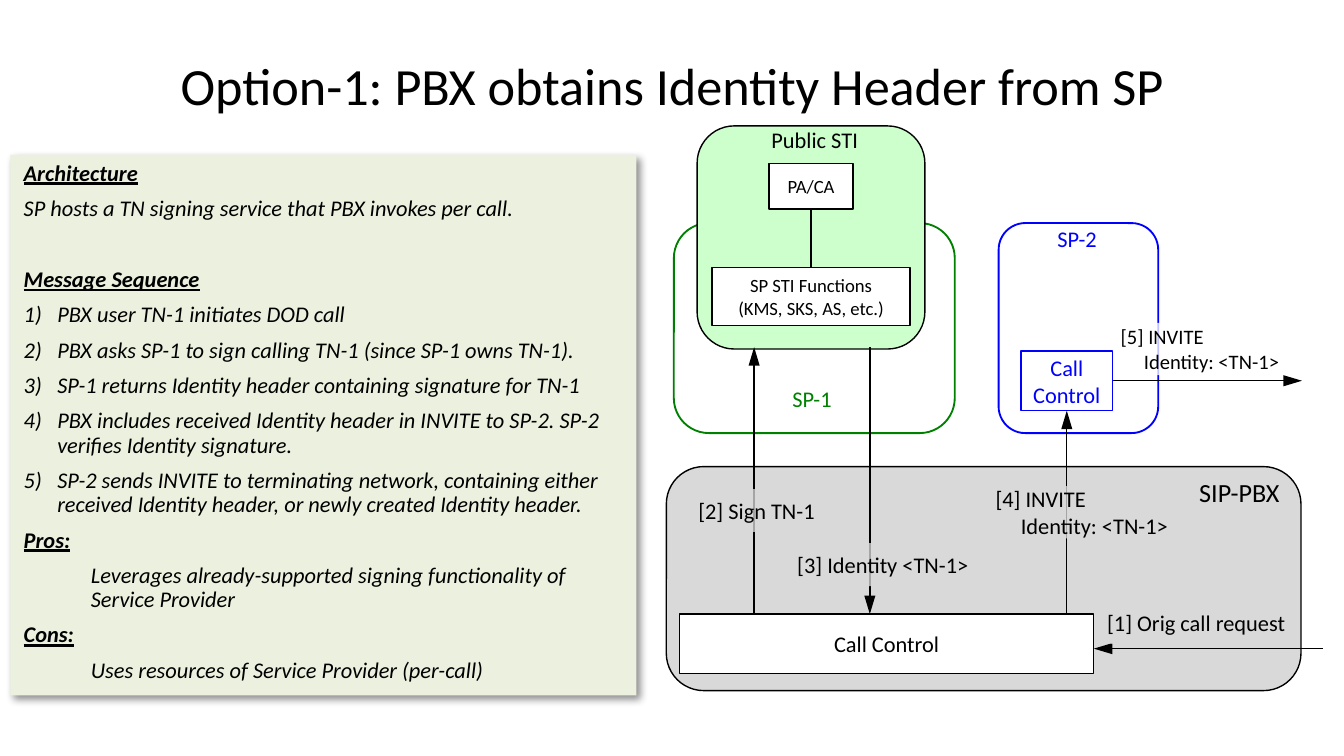
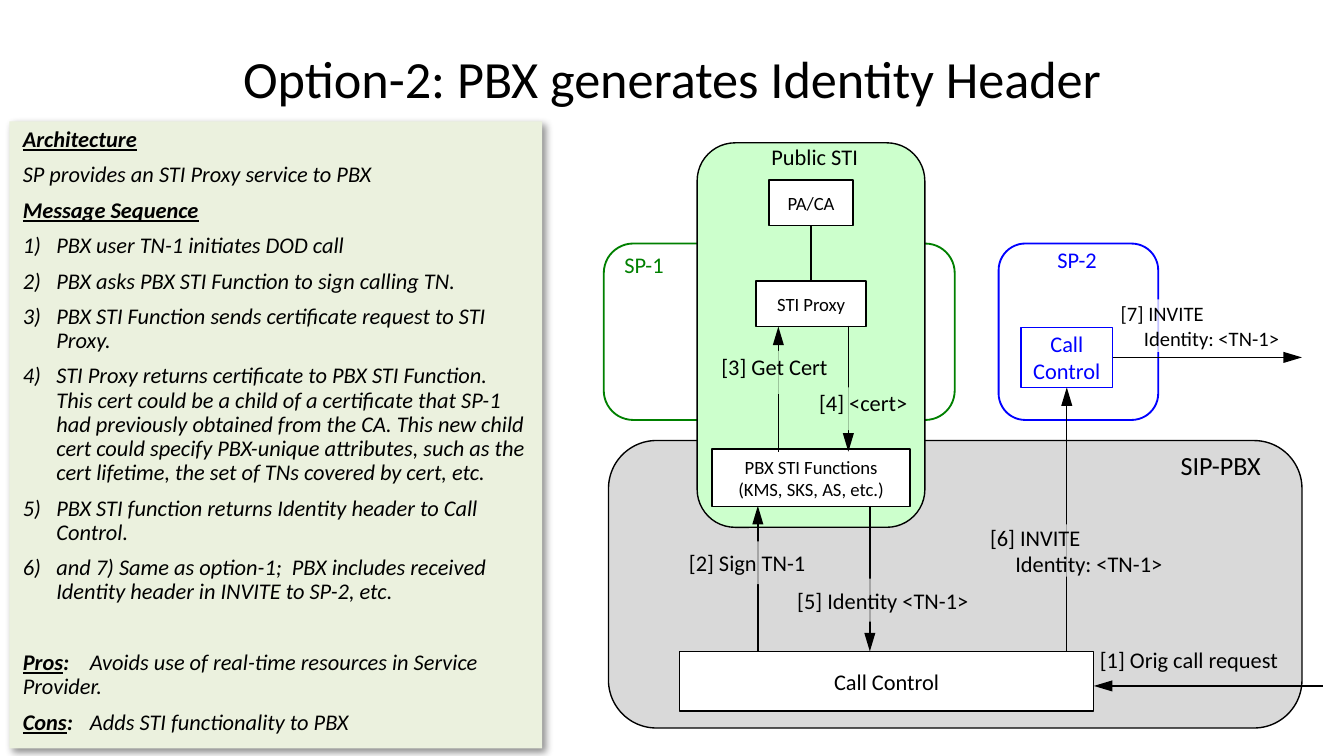
from lxml import etree
from pptx import Presentation
from pptx.dml.color import RGBColor
from pptx.enum import shapes, text
from pptx.oxml.ns import qn
from pptx.util import Pt

COLOURS = {
    "ink": "000000",
    "paper": "FFFFFF",
    "provider_one": "008000",
    "provider_two": "0000FF",
    "sti": "CCFFCC",
    "pbx": "D9D9D9",
    "panel": "EBF1DE",
}
FONT = "Calibri"
RECTANGLE = shapes.MSO_SHAPE.RECTANGLE
ROUNDED = shapes.MSO_SHAPE.ROUNDED_RECTANGLE
CENTER = text.PP_ALIGN.CENTER
LEFT = text.PP_ALIGN.LEFT
TOP, BOTTOM, RIGHT = 0, 2, 3
GAP = 25
INVITE = "Identity: <TN-1>"


def colour(name):
    return RGBColor.from_string(COLOURS[name])


def place(shape, left, top, width, height):
    shape.left, shape.top = Pt(left), Pt(top)
    shape.width, shape.height = Pt(width), Pt(height)


class Deck:
    def __init__(self):
        self.presentation = Presentation()
        self.presentation.slide_width = Pt(720)
        self.presentation.slide_height = Pt(405)
        self.slide = None

    def new_slide(self, title, title_top):
        self.slide = self.presentation.slides.add_slide(self.presentation.slide_layouts[1])
        shape = self.slide.shapes.title
        place(shape, 36, title_top, 648, 67.5)
        paragraph = shape.text_frame.paragraphs[0]
        paragraph.alignment = CENTER
        self.add_words(paragraph, title, 28)

    def add_words(self, paragraph, words, size, ink="ink", bold=None, italic=None,
                  underline=None):
        run = paragraph.add_run()
        run.text = words
        font = run.font
        font.name, font.size = FONT, Pt(size)
        font.color.rgb = colour(ink)
        font.bold, font.italic, font.underline = bold, italic, underline

    def panel(self, area, entries):
        shape = self.slide.placeholders[1]
        place(shape, *area)
        shape.fill.solid()
        shape.fill.fore_color.rgb = colour("panel")
        shape.shadow.inherit = False
        effects = shape._element.spPr.find(qn("a:effectLst"))
        shadow = etree.SubElement(effects, qn("a:outerShdw"), blurRad=str(Pt(4)),
                                  dist=str(Pt(3)), dir="2700000", algn="tl", rotWithShape="0")
        shade = etree.SubElement(shadow, qn("a:srgbClr"), val=COLOURS["ink"])
        etree.SubElement(shade, qn("a:alpha"), val="43000")
        frame = shape.text_frame
        frame.auto_size = text.MSO_AUTO_SIZE.NONE
        frame.vertical_anchor = text.MSO_ANCHOR.TOP
        for index, entry in enumerate(entries):
            paragraph = frame.add_paragraph() if index else frame.paragraphs[0]
            self.panel_entry(paragraph, *entry)

    def panel_entry(self, paragraph, kind, words, detail=None, before=6):
        paragraph.line_spacing = 0.9
        paragraph.space_before = Pt(before)
        paragraph.level = 1 if kind == "point" else 0
        left, indent = {"step": (18, -18), "point": (36, 0)}.get(kind, (0, 0))
        properties = paragraph._p.get_or_add_pPr()
        properties.set("marL", str(Pt(left)))
        properties.set("indent", str(Pt(indent)))
        if kind == "step":
            etree.SubElement(properties, qn("a:buAutoNum"), type="arabicParenR")
        else:
            etree.SubElement(properties, qn("a:buNone"))
        strong = kind in ("heading", "inline")
        self.add_words(paragraph, words, 12, bold=strong, italic=True, underline=strong)
        if kind == "inline":
            tabs = etree.SubElement(properties, qn("a:tabLst"))
            etree.SubElement(tabs, qn("a:tab"), pos=str(Pt(36)), algn="l")
            self.add_words(paragraph, ":", 12, bold=True, italic=True, underline=False)
            self.add_words(paragraph, "\t" + detail, 12, bold=False, italic=True,
                           underline=False)

    def shape(self, kind, area, fill=None, line=None, weight=0.75, opacity=None):
        shape = self.slide.shapes.add_shape(kind, *map(Pt, area))
        shape.shadow.inherit = False
        if fill:
            shape.fill.solid()
            shape.fill.fore_color.rgb = colour(fill)
        else:
            shape.fill.background()
        if opacity:
            fill_colour = next(shape._element.spPr.iter(qn("a:srgbClr")))
            etree.SubElement(fill_colour, qn("a:alpha"), val=str(opacity * 1000))
        if line:
            shape.line.color.rgb = colour(line)
            shape.line.width = Pt(weight)
        else:
            shape.line.fill.background()
        return shape

    def label(self, shape, lines, size, ink="ink", align=CENTER, wrap=True,
              anchor=text.MSO_ANCHOR.MIDDLE, indent=0):
        frame = shape.text_frame
        frame.margin_left = frame.margin_right = frame.margin_top = frame.margin_bottom = 0
        frame.word_wrap = wrap
        frame.vertical_anchor = anchor
        for index, words in enumerate(lines):
            paragraph = frame.add_paragraph() if index else frame.paragraphs[0]
            paragraph.alignment = align
            if index and indent:
                paragraph._p.get_or_add_pPr().set("marL", str(Pt(indent)))
            self.add_words(paragraph, words, size, ink)

    def zone(self, area, fill, line, weight=0.75):
        return self.shape(ROUNDED, area, fill, line, weight)

    def box(self, area, *lines, size=10, ink="ink", wrap=False):
        shape = self.shape(RECTANGLE, area, "paper", ink)
        self.label(shape, lines, size, ink, wrap=wrap)
        return shape

    def name(self, area, words, size=12, ink="ink"):
        self.label(self.shape(ROUNDED, area), [words], size, ink)

    def message(self, area, *lines, fill="pbx", size=12, align=LEFT,
                anchor=text.MSO_ANCHOR.MIDDLE, opacity=76):
        shape = self.shape(ROUNDED, area, fill, opacity=opacity)
        self.label(shape, lines, size, align=align, anchor=anchor, indent=size * 1.13)

    def line(self, start, end, arrow=True, begin_at=None, end_at=None):
        connector = self.slide.shapes.add_connector(
            shapes.MSO_CONNECTOR.STRAIGHT, *map(Pt, start + end))
        if begin_at:
            connector.begin_connect(*begin_at)
        if end_at:
            connector.end_connect(*end_at)
        connector.line.color.rgb = colour("ink")
        connector.line.width = Pt(0.75)
        if arrow:
            outline = connector._element.spPr.find(qn("a:ln"))
            etree.SubElement(outline, qn("a:tailEnd"), type="triangle", w="med", len="lg")
        etree.SubElement(connector._element.spPr, qn("a:effectLst"))


def draw_provider_one(deck, left, width, top, height, name_left, name_top):
    deck.zone((left, top, width, height), "paper", "provider_one", 1)
    deck.name((name_left, name_top, 38, 33), "SP-1", ink="provider_one")


def draw_pbx(deck, area, name_left, name_top, control_top):
    deck.zone(area, "pbx", "ink")
    deck.name((name_left, name_top, 80, 33), "SIP-PBX", 14)
    deck.box((364, control_top, 222, 32), "Call Control", size=12)
    request_y = control_top + 18.5
    deck.line((708.5, request_y), (586, request_y))


def draw_public_sti(deck, top, height, functions_top, functions_name):
    deck.zone((373.5, top, 122, height), "sti", "ink")
    deck.name((396.5, top - 9, 80, 33), "Public STI")
    authority = deck.box((412, top + 20, 45, 24.5), "PA/CA")
    functions = deck.box((381.5, functions_top, 106, 31), functions_name,
                         "(KMS, SKS, AS, etc.)")
    return authority, functions


def link(deck, lower, upper):
    deck.line((434.5, 150), (434.5, 112), False, (lower, TOP), (upper, BOTTOM))


def draw_signing(deck, sign_x, sti_y, control_top, sign_label, identity_top, identity):
    deck.line((466, sti_y), (466, control_top))
    deck.line((sign_x, control_top), (sign_x, sti_y))
    deck.message((*sign_label, 86, 23), "[2] Sign TN-1")
    deck.message((426, identity_top, 96, 23), identity)


def draw_provider_two(deck, top, height, control_top, pbx_control_top,
                      invite_area, invite, forwarded):
    deck.zone((535, top, 85.5, height), "paper", "provider_two", 1)
    deck.name((558, top - 8, 38, 33), "SP-2", ink="provider_two")
    control = deck.box((547, control_top, 49, 32), "Call Control",
                       size=12, ink="provider_two", wrap=True)
    deck.line((571.5, pbx_control_top), (571.5, control_top + 32), end_at=(control, BOTTOM))
    deck.message(invite_area, invite, INVITE)
    deck.message((599, control_top - 15, 109, 28), forwarded, INVITE, fill="paper", size=11)
    middle = control_top + 16
    deck.line((596, middle), (697.5, middle), begin_at=(control, RIGHT))


def build_option_one(deck):
    deck.new_slide("Option-1: PBX obtains Identity Header from SP", 11.5)
    deck.panel((5.5, 83, 335.5, 289.5), [
        ("heading", "Architecture"),
        ("text", "SP hosts a TN signing service that PBX invokes per call."),
        ("heading", "Message Sequence", None, GAP),
        ("step", "PBX user TN-1 initiates DOD call"),
        ("step", "PBX asks SP-1 to sign calling TN-1 (since SP-1 owns TN-1)."),
        ("step", "SP-1 returns Identity header containing signature for TN-1"),
        ("step", "PBX includes received Identity header in INVITE to SP-2. SP-2 "
                 "verifies Identity signature."),
        ("step", "SP-2 sends INVITE to terminating network, containing either "
                 "received Identity header, or newly created Identity header."),
        ("heading", "Pros:"),
        ("point", "Leverages already-supported signing functionality of Service Provider"),
        ("heading", "Cons:"),
        ("point", "Uses resources of Service Provider (per-call)"),
    ])
    control_top = 329
    draw_provider_one(deck, 361, 150.5, 119.5, 112.5, 416, 197)
    draw_pbx(deck, (357, 250, 340, 120), 624, 247, control_top)
    deck.message((592, 322, 98, 23), "[1] Orig call request")
    authority, functions = draw_public_sti(deck, 67.5, 119.5, 143.5, "SP STI Functions")
    link(deck, functions, authority)
    draw_signing(deck, 404, 186, control_top, (373, 262), 291, "[3] Identity <TN-1>")
    draw_provider_two(deck, 119.5, 112.5, 188, control_top, (532, 260.5, 103, 28),
                      "[4] INVITE", "[5] INVITE")


def build_option_two(deck):
    deck.new_slide("Option-2: PBX generates Identity Header", 8)
    deck.panel((5, 65, 285.5, 336), [
        ("heading", "Architecture"),
        ("text", "SP provides an STI Proxy service to PBX"),
        ("heading", "Message Sequence"),
        ("step", "PBX user TN-1 initiates DOD call"),
        ("step", "PBX asks PBX STI Function to sign calling TN."),
        ("step", "PBX STI Function sends certificate request to STI Proxy."),
        ("step", "STI Proxy returns certificate to PBX STI Function. This cert could be "
                 "a child of a certificate that SP-1 had previously obtained from the CA. "
                 "This new child cert could specify PBX-unique attributes, such as the "
                 "cert lifetime, the set of TNs covered by cert, etc."),
        ("step", "PBX STI function returns Identity header to Call Control."),
        ("step", "and 7) Same as option-1;  PBX includes received Identity header in "
                 "INVITE to SP-2, etc."),
        ("inline", "Pros", "Avoids use of real-time resources in Service Provider.", GAP),
        ("inline", "Cons", "Adds STI functionality to PBX"),
    ])
    control_top = 349
    draw_provider_one(deck, 323.5, 188, 130.5, 94.5, 326, 125)
    draw_pbx(deck, (326, 236, 371.5, 154), 614, 232.5, control_top)
    deck.name((588, 342, 98, 23), "[1] Orig call request")
    draw_provider_two(deck, 130.5, 94.5, 175.5, control_top, (529, 281, 109.5, 28),
                      "[6] INVITE", "[7] INVITE")
    authority, functions = draw_public_sti(deck, 76.5, 206, 240.5, "PBX STI Functions")
    proxy = deck.box((405, 150.5, 59, 24.5), "STI Proxy")
    link(deck, proxy, authority)
    deck.line((417, 242), (417, 175))
    deck.line((454.5, 174.5), (454.5, 242))
    for area, words in [((379, 188, 72, 23), "[3] Get Cert"),
                        ((435.5, 207.5, 54, 23), "[4] <cert>")]:
        deck.message(area, words, fill="sti", align=CENTER,
                     anchor=text.MSO_ANCHOR.TOP, opacity=77)
    draw_signing(deck, 406, 271, control_top, (368, 290), 310, "[5] Identity <TN-1>")


def main():
    deck = Deck()
    build_option_one(deck)
    build_option_two(deck)
    deck.presentation.save("out.pptx")


if __name__ == "__main__":
    main()
